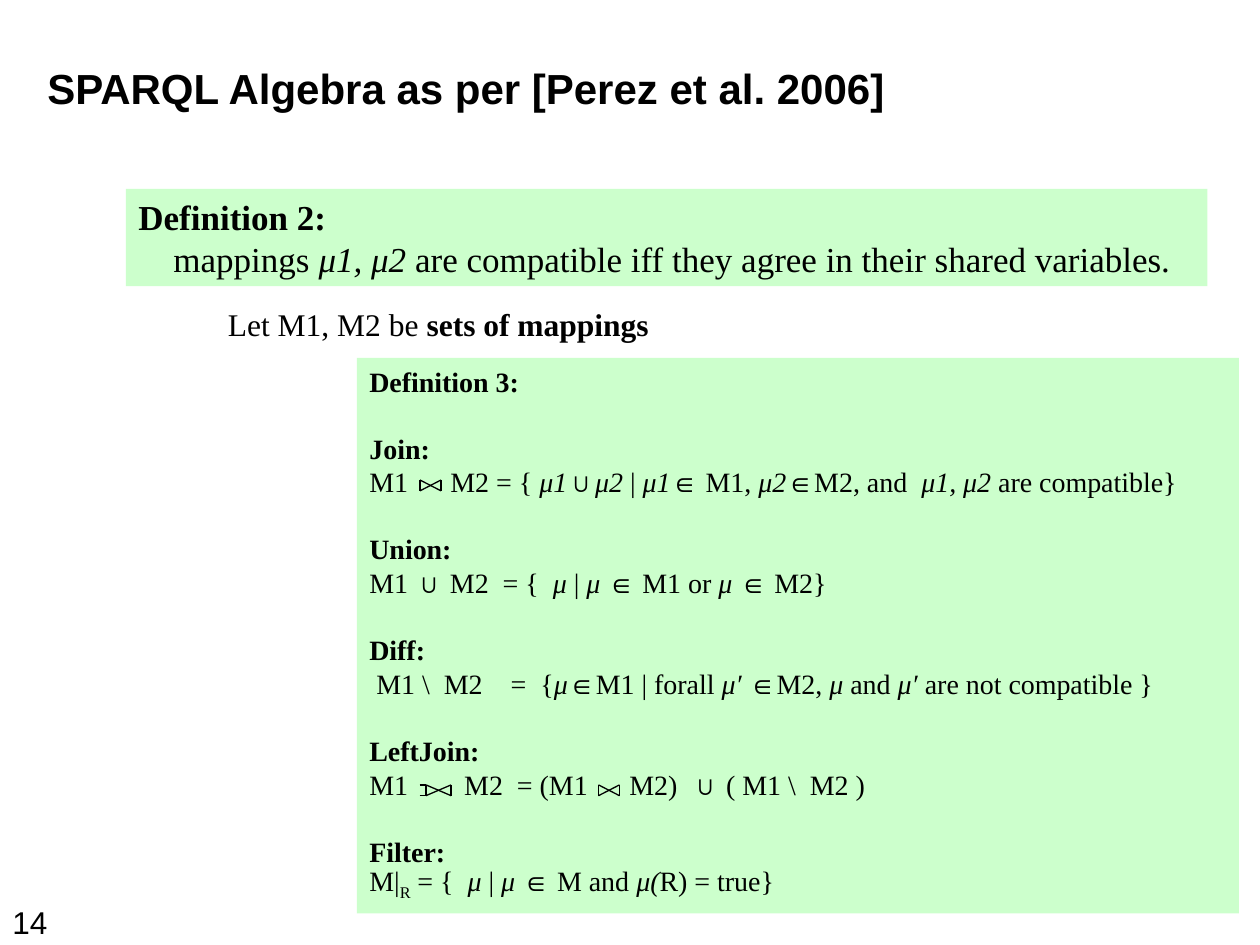
from lxml import etree
from pptx import Presentation
from pptx.dml.color import RGBColor
from pptx.enum.shapes import MSO_CONNECTOR, MSO_SHAPE
from pptx.enum.text import MSO_ANCHOR, PP_ALIGN
from pptx.oxml.ns import qn
from pptx.util import Pt

BLACK = RGBColor(0, 0, 0)
GREEN = RGBColor(0xCC, 0xFF, 0xCC)
LINE, RECT = MSO_CONNECTOR.STRAIGHT, MSO_SHAPE.RECTANGLE
TOP, LEFT = MSO_ANCHOR.TOP, PP_ALIGN.LEFT
SANS, SERIF = "Arial", "Times New Roman"

# Name, formula (*italic*, ~subscript~) and tab stops of each operator
RULES = [
    ("Join:", "M1\tM2 = { *μ1*∪*μ2* | *μ1*∈ M1, *μ2*∈M2, and  *μ1, μ2* are compatible}", [46.3]),
    ("Union:", "M1 ∪ M2  = {  *μ* | *μ* ∈ M1 or *μ* ∈ M2}", []),
    ("Diff:", " M1 \\  M2\t=  {*μ*∈M1 | forall *μ′* ∈M2, *μ *and *μ′* are not compatible }", [80.8]),
    ("LeftJoin:", "M1\tM2  = (M1\tM2)  ∪ ( M1 \\  M2 )", [54.2, 148.5]),
    ("Filter:", "M|~R~ = {  *μ* | *μ* ∈ M and *μ(*R) = true}", []),
]


def set_tabs(para, stops):
    if stops:
        tabs = etree.SubElement(para._p.get_or_add_pPr(), qn("a:tabLst"))
        for stop in stops:
            etree.SubElement(tabs, qn("a:tab"), pos=str(Pt(stop)), algn="l")


def write(para, text, size, face=SERIF, bold=False, tabs=(), strong=False):
    """Fill a paragraph; starred parts are italic, or bold if strong."""
    para.alignment = LEFT
    set_tabs(para, tabs)
    font = para.font
    font.name, font.size, font.bold = face, Pt(size), bold
    font.color.rgb = BLACK
    for i, part in enumerate(text.split("*")):
        for j, bit in enumerate(part.split("~")):
            if not bit:
                continue
            run = para.add_run()
            run.text = bit
            if i % 2:
                if strong:
                    run.font.bold = True
                else:
                    run.font.italic = True
            if j % 2:
                run._r.get_or_add_rPr().set("baseline", "-25000")


def label(slide, box, text, size, face, **style):
    shape = slide.shapes.add_textbox(*map(Pt, box))
    shape.text_frame.word_wrap = True
    write(shape.text_frame.paragraphs[0], text, size, face, **style)


def panel(slide, box):
    shape = slide.shapes.add_shape(RECT, *map(Pt, box))
    shape.shadow.inherit = False
    shape.fill.solid()
    shape.fill.fore_color.rgb = GREEN
    shape.line.fill.background()
    frame = shape.text_frame
    frame.word_wrap = True
    frame.vertical_anchor = TOP
    return frame


def bowtie(slide, x, y, width, wing=0):
    """Join sign; a wing adds the two left strokes of an outer join."""
    low, right = y + 6.2, x + width
    ends = [(x, y, right, low), (x, low, right, y),
            (right, low, right, y), (x, low, x, y)]
    if wing:
        ends += [(x - wing, y, x, y), (x - wing, low, x, low)]
    group = slide.shapes.add_group_shape()
    for end in ends:
        line = group.shapes.add_connector(LINE, *map(Pt, end))
        line.line.color.rgb = BLACK
        line.line.width = Pt(0.75)
        etree.SubElement(line._element.spPr, qn("a:effectLst"))


def compat(slide, box):
    frame = panel(slide, box)
    head, body = frame.paragraphs[0], frame.add_paragraph()
    write(head, "Definition 2:", 20, bold=True)
    write(body, "mappings *μ1, μ2* are compatible iff they agree in their shared variables.", 20)
    body._p.get_or_add_pPr().set("marL", str(Pt(20)))
    for para in (head, body):
        para.line_spacing = Pt(24)


def algebra(slide, box):
    left, top = box[:2]
    pitch = 19.2
    frame = panel(slide, box)
    write(frame.paragraphs[0], "Definition 3:", 16, bold=True)
    for name, rule, tabs in RULES:
        head = frame.add_paragraph()
        write(head, name, 16, bold=True)
        head.space_before = Pt(pitch)
        write(frame.add_paragraph(), rule, 16, tabs=tabs)
    for para in frame.paragraphs:
        para.line_spacing = Pt(pitch)
    # Join signs in the gaps of the formulas
    bowtie(slide, left + 36, top + 69.8, 12)
    bowtie(slide, left + 39.4, top + 244, 14.4, wing=3.6)
    bowtie(slide, left + 138, top + 244, 12)


def main():
    deck = Presentation()
    deck.slide_width, deck.slide_height = Pt(720), Pt(540)
    slide = deck.slides.add_slide(deck.slide_layouts[6])
    # Title
    label(slide, (20, 32, 578, 62), "SPARQL Algebra as per [Perez et al. 2006]", 24, SANS, bold=True)
    # Lead-in between the definitions
    label(slide, (123.2, 170.5, 400, 30), "Let M1, M2 be *sets of mappings*", 18, SERIF, strong=True)
    # Slide number
    label(slide, (0, 512.5, 69, 22), "14", 18, SANS)
    # Definitions
    compat(slide, (72, 108, 618, 55.5))
    algebra(slide, (204, 204.5, 504, 317.5))
    deck.save("out.pptx")


if __name__ == "__main__":
    main()
